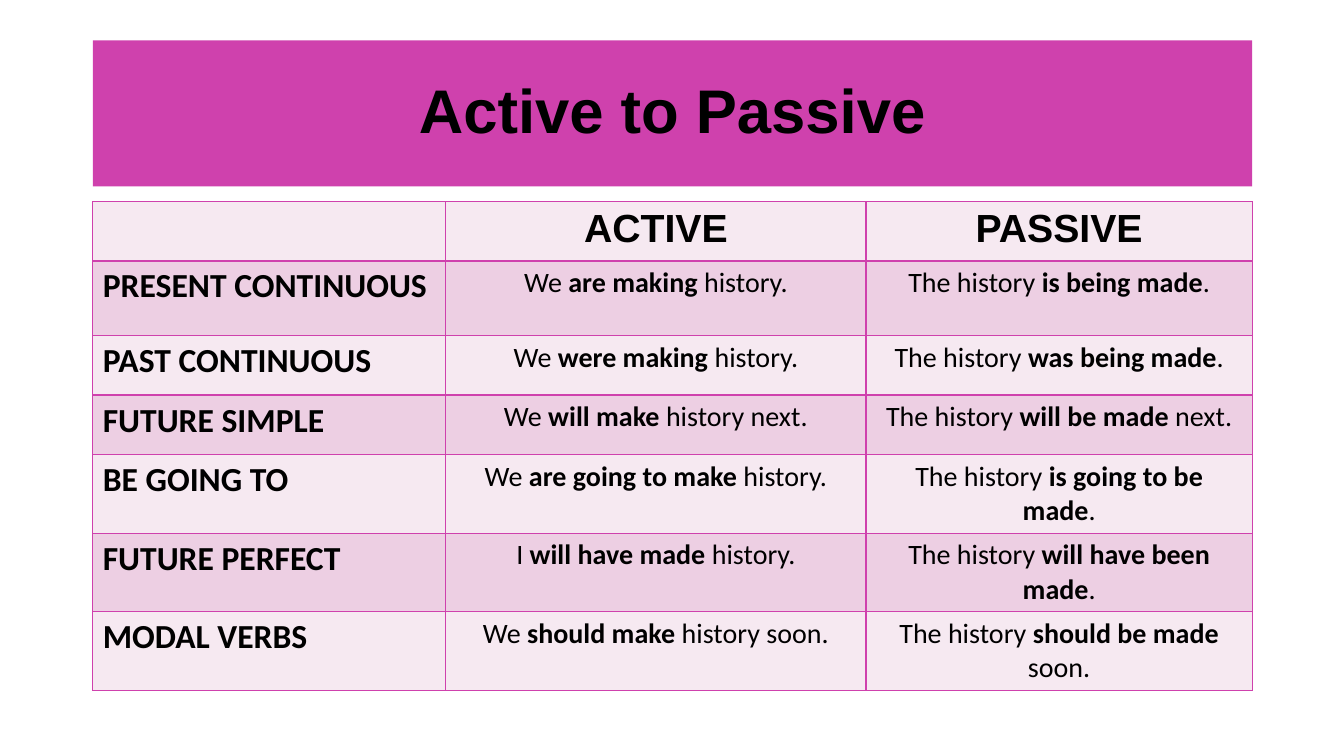
import pptx
import pptx.dml.color
import pptx.enum.text
import pptx.oxml
import pptx.oxml.ns
import pptx.util
from pptx.util import Inches

TITLE = "Active to Passive"
HEADINGS = ["", "ACTIVE", "PASSIVE"]
TENSES = [
    ("PRESENT CONTINUOUS", ("We ", "are making ", "history."),
     ("The history ", "is being made", ".")),
    ("PAST CONTINUOUS", ("We ", "were making ", "history."),
     ("The history ", "was being made", ".")),
    ("FUTURE SIMPLE", ("We ", "will make ", "history next."),
     ("The history ", "will be made ", "next.")),
    ("BE GOING TO", ("We ", "are going to make ", "history."),
     ("The history ", "is going to be made", ".")),
    ("FUTURE PERFECT", ("I ", "will have made ", "history."),
     ("The history ", "will have been made", ".")),
    ("MODAL VERBS", ("We ", "should make ", "history soon."),
     ("The history ", "should be made ", "soon.")),
]
COLUMN_WIDTHS = [3.5, 4.17, 3.83]
ROW_HEIGHTS = [0.59, 0.74] + [0.59] * 5
LEFT, WIDTH = 0.92, 11.5
PINK, BLACK = "CF41AD", "000000"
BANDS = ["F6E9F1", "EDCFE3"]
CENTER = pptx.enum.text.PP_ALIGN.CENTER


def color(hex_code):
    return pptx.dml.color.RGBColor.from_string(hex_code)


def paint(target, hex_code):
    target.fill.solid()
    target.fill.fore_color.rgb = color(hex_code)


def set_font(font, size, name, bold=None):
    font.size = pptx.util.Pt(size)
    font.name = name
    font.bold = bold
    font.color.rgb = color(BLACK)


def add_borders(cell):
    properties = cell._tc.get_or_add_tcPr()
    for side in ("lnL", "lnR", "lnT", "lnB"):
        properties.append(pptx.oxml.parse_xml(
            f'<a:{side} {pptx.oxml.ns.nsdecls("a")} w="12700"><a:solidFill>'
            f'<a:srgbClr val="{PINK}"/></a:solidFill></a:{side}>'))


def write_label(cell, label, size, name):
    paragraph = cell.text_frame.paragraphs[0]
    paragraph.text = label
    set_font(paragraph.font, size, name, True)
    return paragraph


def write_example(cell, parts):
    paragraph = cell.text_frame.paragraphs[0]
    paragraph.alignment = CENTER
    set_font(paragraph.font, 20, "Calibri")
    for index, part in enumerate(parts):
        run = paragraph.add_run()
        run.text = part
        set_font(run.font, 20, "Calibri", index == 1)


def main():
    presentation = pptx.Presentation()
    presentation.slide_width = Inches(13.33)
    presentation.slide_height = Inches(7.5)
    slide = presentation.slides.add_slide(presentation.slide_layouts[5])

    title = slide.shapes.title
    title.left, title.top = Inches(LEFT), Inches(0.4)
    title.width, title.height = Inches(WIDTH), Inches(1.45)
    paint(title, PINK)
    title.text_frame.text = TITLE
    title.text_frame.vertical_anchor = pptx.enum.text.MSO_ANCHOR.MIDDLE
    heading = title.text_frame.paragraphs[0]
    heading.alignment = CENTER
    heading.line_spacing = 0.9
    set_font(heading.font, 44, "Arial", True)

    voices = slide.shapes.add_table(
        len(ROW_HEIGHTS), len(COLUMN_WIDTHS), Inches(LEFT), Inches(2),
        Inches(WIDTH), Inches(sum(ROW_HEIGHTS))).table
    for column, width in zip(voices.columns, COLUMN_WIDTHS):
        column.width = Inches(width)
    for index, (row, height) in enumerate(zip(voices.rows, ROW_HEIGHTS)):
        row.height = Inches(height)
        for cell in row.cells:
            add_borders(cell)
            paint(cell, BANDS[index % 2])

    for column, label in enumerate(HEADINGS):
        if label:
            write_label(voices.cell(0, column), label, 28, "Arial").alignment = CENTER
    for row, (tense, active, passive) in enumerate(TENSES, start=1):
        write_label(voices.cell(row, 0), tense, 24, "Calibri")
        write_example(voices.cell(row, 1), active)
        write_example(voices.cell(row, 2), passive)

    presentation.save("out.pptx")


if __name__ == "__main__":
    main()
